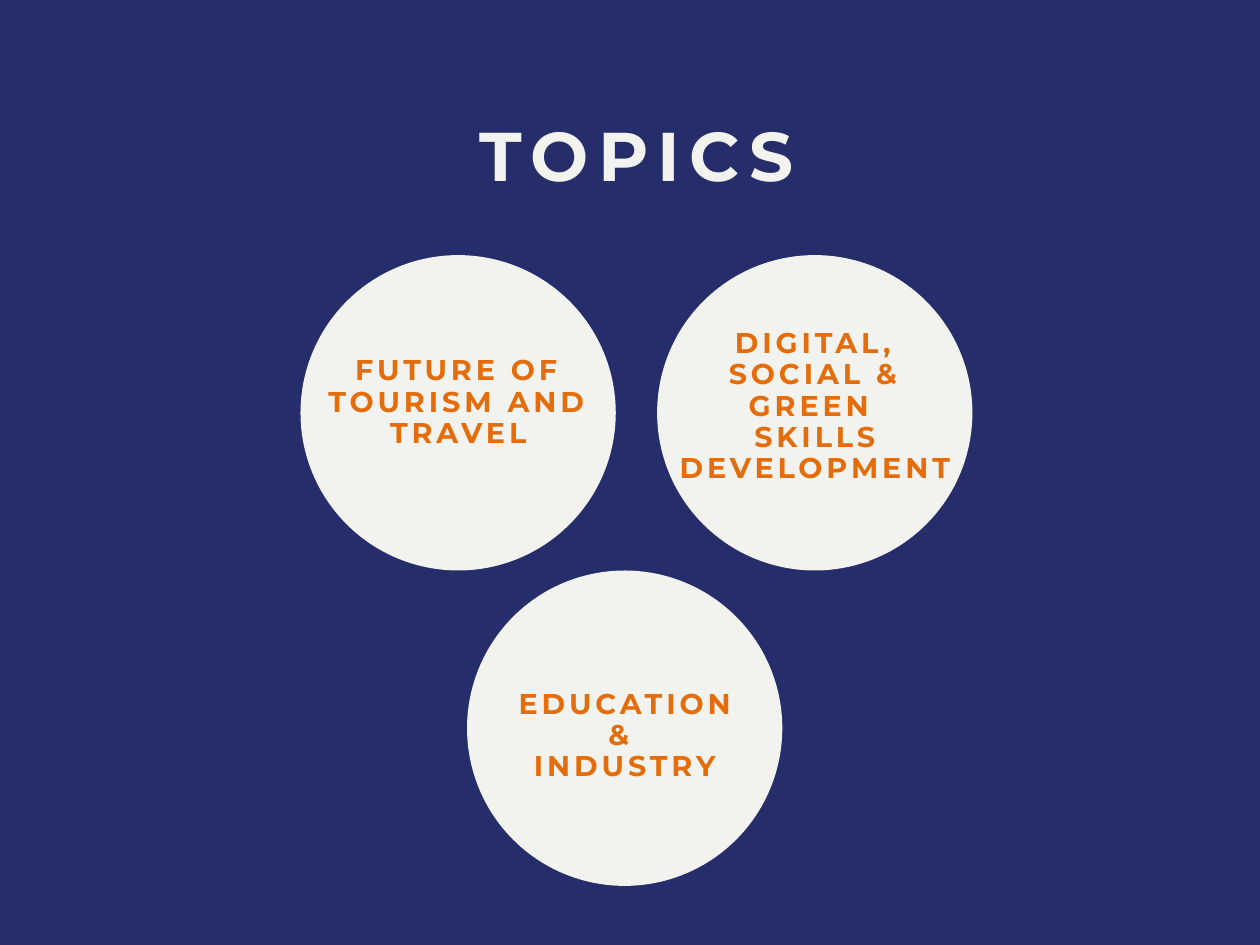
from pptx import Presentation
from pptx.dml.color import RGBColor
from pptx.enum.shapes import MSO_SHAPE
from pptx.enum.text import MSO_ANCHOR, MSO_AUTO_SIZE, PP_ALIGN
from pptx.util import Inches, Pt

NAVY = RGBColor(0x26, 0x2D, 0x6B)
IVORY = RGBColor(0xF2, 0xF3, 0xEE)
ORANGE = RGBColor(0xE4, 0x6C, 0x0A)

OVAL = MSO_SHAPE.OVAL
CENTER = PP_ALIGN.CENTER
TOP = MSO_ANCHOR.TOP
NO_AUTOFIT = MSO_AUTO_SIZE.NONE

TITLE_LAYOUT = 5
DIAMETER = 2.67
LABEL_WIDTH = 2.35
UPPER_ROW, LOWER_ROW = 2.16, 4.83

# Circle centre x, circle top, label top, label height, label paragraphs
TOPICS = [
    (3.88, UPPER_ROW, 3.01, 1.07, ["FUTURE OF TOURISM AND TRAVEL"]),
    (6.9, UPPER_ROW, 2.78, 1.33,
     ["DIGITAL, SOCIAL & GREEN ", "SKILLS", "DEVELOPMENT"]),
    (5.29, LOWER_ROW, 5.83, 1.07, ["EDUCATION", "& ", "INDUSTRY"]),
]


class TopicSlide:
    """Holds the text styles and the slide being drawn."""

    FRAME = {"margin_left": 0, "margin_right": 0, "margin_top": 0,
             "margin_bottom": 0, "word_wrap": True,
             "auto_size": NO_AUTOFIT, "vertical_anchor": TOP}
    TITLE = {"size": Pt(42), "color": IVORY, "leading": Pt(45.8),
             "tracking": 590}
    LABEL = {"size": Pt(17.4), "color": ORANGE, "leading": Pt(19),
             "tracking": 240}

    def __init__(self, slide):
        self.slide = slide
        background = slide.background.fill
        background.solid()
        background.fore_color.rgb = NAVY

    def set_text(self, shape, lines, style):
        frame = shape.text_frame
        for name, value in self.FRAME.items():
            setattr(frame, name, value)
        frame.text = "\n".join(lines)
        paragraph_format = {"alignment": CENTER, "space_before": Pt(0),
                            "line_spacing": style["leading"]}
        font_format = {"name": "Montserrat", "bold": True,
                       "size": style["size"]}
        for paragraph in frame.paragraphs:
            for name, value in paragraph_format.items():
                setattr(paragraph, name, value)
            for run in paragraph.runs:
                for name, value in font_format.items():
                    setattr(run.font, name, value)
                run.font.color.rgb = style["color"]
                # Letter spacing, in hundredths of a point
                run._r.get_or_add_rPr().set("spc", str(style["tracking"]))

    def title(self, text, left, top, width, height):
        shape = self.slide.shapes.title
        bounds = {"left": left, "top": top, "width": width, "height": height}
        for name, value in bounds.items():
            setattr(shape, name, Inches(value))
        self.set_text(shape, [text], self.TITLE)

    def circle(self, center, top):
        shape = self.slide.shapes.add_shape(
            OVAL, Inches(center - DIAMETER / 2), Inches(top),
            Inches(DIAMETER), Inches(DIAMETER))
        shape.shadow.inherit = False
        shape.fill.solid()
        shape.fill.fore_color.rgb = IVORY
        shape.line.fill.background()

    def label(self, lines, center, top, height):
        shape = self.slide.shapes.add_textbox(
            Inches(center - LABEL_WIDTH / 2), Inches(top),
            Inches(LABEL_WIDTH), Inches(height))
        self.set_text(shape, lines, self.LABEL)


def main():
    presentation = Presentation()
    presentation.slide_width = Inches(10.67)
    presentation.slide_height = Inches(8)
    layout = presentation.slide_layouts[TITLE_LAYOUT]
    topic_slide = TopicSlide(presentation.slides.add_slide(layout))

    # Heading
    topic_slide.title("TOPICS", 0.87, 1.02, 9.04, 0.65)

    # Circles, then the labels over them
    for center, circle_top, *_ in TOPICS:
        topic_slide.circle(center, circle_top)
    for center, _, label_top, height, lines in TOPICS:
        topic_slide.label(lines, center, label_top, height)

    presentation.save("out.pptx")


if __name__ == "__main__":
    main()
